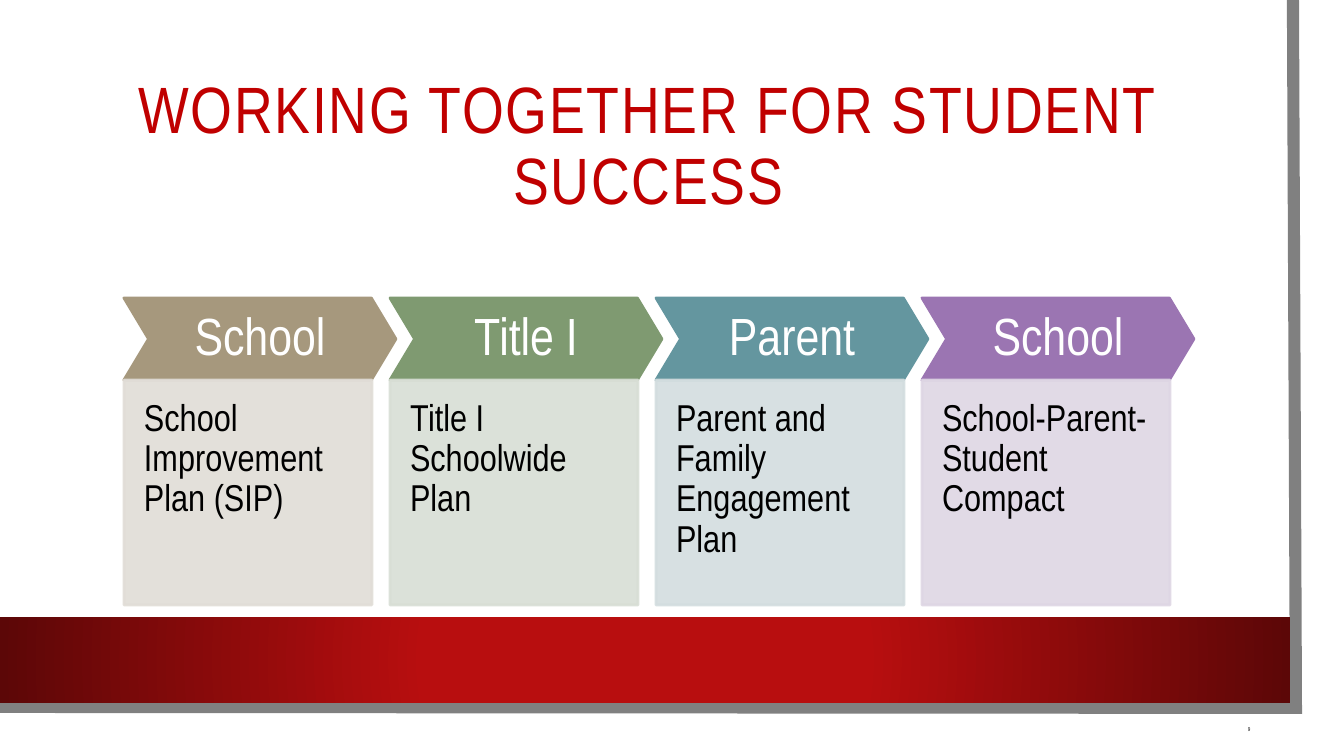
"""Build the slide on four plans that work together for student success."""
from lxml import etree
from pptx import Presentation, util as u
from pptx.dml.color import RGBColor
from pptx.enum import shapes, text
from pptx.oxml import parse_xml
from pptx.oxml.ns import nsdecls, qn

PX = 914400 / 134.4
FONT = "Arial Narrow"
WHITE = RGBColor(0xFF, 0xFF, 0xFF)
BLACK = RGBColor(0, 0, 0)
INK = RGBColor(0x0D, 0x0D, 0x0D)
RED = RGBColor(0xC0, 0, 0)
GRAY = RGBColor(0x80, 0x80, 0x80)
BAND_CENTER = RGBColor(0xB8, 0x0E, 0x0F)
BAND_EDGE = RGBColor(0x5C, 0x07, 0x07)

TITLE = "WORKING TOGETHER FOR STUDENT SUCCESS"
PAGE_NUMBER = "9"
PLANS = [
    ("School", "School Improvement Plan (SIP)",
     RGBColor(0xA6, 0x98, 0x7D), RGBColor(0xE1, 0xDD, 0xD7)),
    ("Title I", "Title I Schoolwide Plan",
     RGBColor(0x7F, 0x9A, 0x71), RGBColor(0xD8, 0xDE, 0xD5)),
    ("Parent", "Parent and Family Engagement Plan",
     RGBColor(0x64, 0x96, 0x9F), RGBColor(0xD3, 0xDD, 0xDF)),
    ("School", "School-Parent-Student Compact",
     RGBColor(0x9B, 0x75, 0xB2), RGBColor(0xDE, 0xD6, 0xE4)),
]

PLAN_LEFT, PLAN_PITCH, PLAN_TOP = 124, 266, 298
HEADING_W, HEADING_H = 272, 82
PANEL_W, PANEL_H = 248, 225
PAGE_EDGE = [(1293, 0), (1296, 708), (-3, 707)]


def emu(*lengths):
    return [round(length * PX) for length in lengths]


def apply(target, values):
    for name, value in values.items():
        setattr(target, name, value)


def write(shape, words, size, color, align, anchor, margins=None, spacing=0.9):
    frame = shape.text_frame
    frame.text = words
    apply(frame, {"word_wrap": True, "vertical_anchor": anchor,
                  "auto_size": text.MSO_AUTO_SIZE.NONE})
    if margins:
        sides = ("margin_left", "margin_top", "margin_right", "margin_bottom")
        apply(frame, dict(zip(sides, emu(*margins))))
    line = frame.paragraphs[0]
    apply(line, {"alignment": align, "line_spacing": spacing})
    font = line.runs[0].font
    apply(font, {"name": FONT, "size": u.Pt(size)})
    font.color.rgb = color
    return font


def add_block(slide, preset, box, color, outlined=True):
    block = slide.shapes.add_shape(preset, *emu(*box))
    block.shadow.inherit = False
    block.fill.solid()
    block.fill.fore_color.rgb = color
    if outlined:
        block.line.color.rgb = color
        block.line.width = u.Pt(1.5)
    else:
        block.line.fill.background()
    return block


def add_page(slide):
    outline = slide.shapes.build_freeform(*PAGE_EDGE[0], scale=PX)
    outline.add_line_segments(PAGE_EDGE[1:], close=False)
    edge = outline.convert_to_shape()
    edge.shadow.inherit = False
    edge.fill.background()
    edge.line.color.rgb = GRAY
    edge.line.width = u.Pt(6.5)
    etree.SubElement(edge.element.spPr.find(qn("a:ln")), qn("a:miter"), lim="800000")

    band = add_block(slide, shapes.MSO_SHAPE.RECTANGLE, (0, 617, 1290, 86),
                     BAND_CENTER, False)
    gradient = parse_xml(
        f'<a:gradFill {nsdecls("a")} rotWithShape="1"><a:gsLst>'
        f'<a:gs pos="34000"><a:srgbClr val="{BAND_CENTER}"/></a:gs>'
        f'<a:gs pos="100000"><a:srgbClr val="{BAND_EDGE}"/></a:gs></a:gsLst>'
        '<a:path path="circle"><a:fillToRect l="50000" t="50000" r="50000" b="50000"/>'
        '</a:path></a:gradFill>')
    properties = band.element.spPr
    properties.replace(properties.find(qn("a:solidFill")), gradient)


def add_plan(slide, index, heading, plan, strong, pale):
    left = PLAN_LEFT + index * PLAN_PITCH
    chevron = add_block(slide, shapes.MSO_SHAPE.CHEVRON,
                        (left, PLAN_TOP, HEADING_W, HEADING_H), strong)
    chevron.adjustments[0] = 0.3
    write(chevron, heading, 28, WHITE, text.PP_ALIGN.CENTER,
          text.MSO_ANCHOR.MIDDLE, (9, 9, 9, 9))

    panel = add_block(slide, shapes.MSO_SHAPE.RECTANGLE,
                      (left, PLAN_TOP + HEADING_H, PANEL_W, PANEL_H), pale)
    for color in panel.element.spPr.iter(qn("a:srgbClr")):
        etree.SubElement(color, qn("a:alpha"), val="90000")
    write(panel, plan, 20, BLACK, text.PP_ALIGN.LEFT,
          text.MSO_ANCHOR.TOP, (20, 19, 20, 39))


def main():
    deck = Presentation()
    deck.slide_width, deck.slide_height = emu(1344, 756)
    slide = deck.slides.add_slide(deck.slide_layouts[5])
    add_page(slide)

    title = slide.shapes.title
    apply(title, dict(zip(("left", "top", "width", "height"), emu(113, 65, 1071, 165))))
    title_font = write(title, TITLE, 35.1, RED, text.PP_ALIGN.CENTER,
                       text.MSO_ANCHOR.MIDDLE)
    title_font._element.set("spc", "100")

    for index, plan in enumerate(PLANS):
        add_plan(slide, index, *plan)

    number = slide.shapes.add_textbox(*emu(1195, 714, 108, 31))
    write(number, PAGE_NUMBER, 3, INK, text.PP_ALIGN.CENTER,
          text.MSO_ANCHOR.MIDDLE, spacing=0.8)
    deck.save("out.pptx")


if __name__ == "__main__":
    main()
